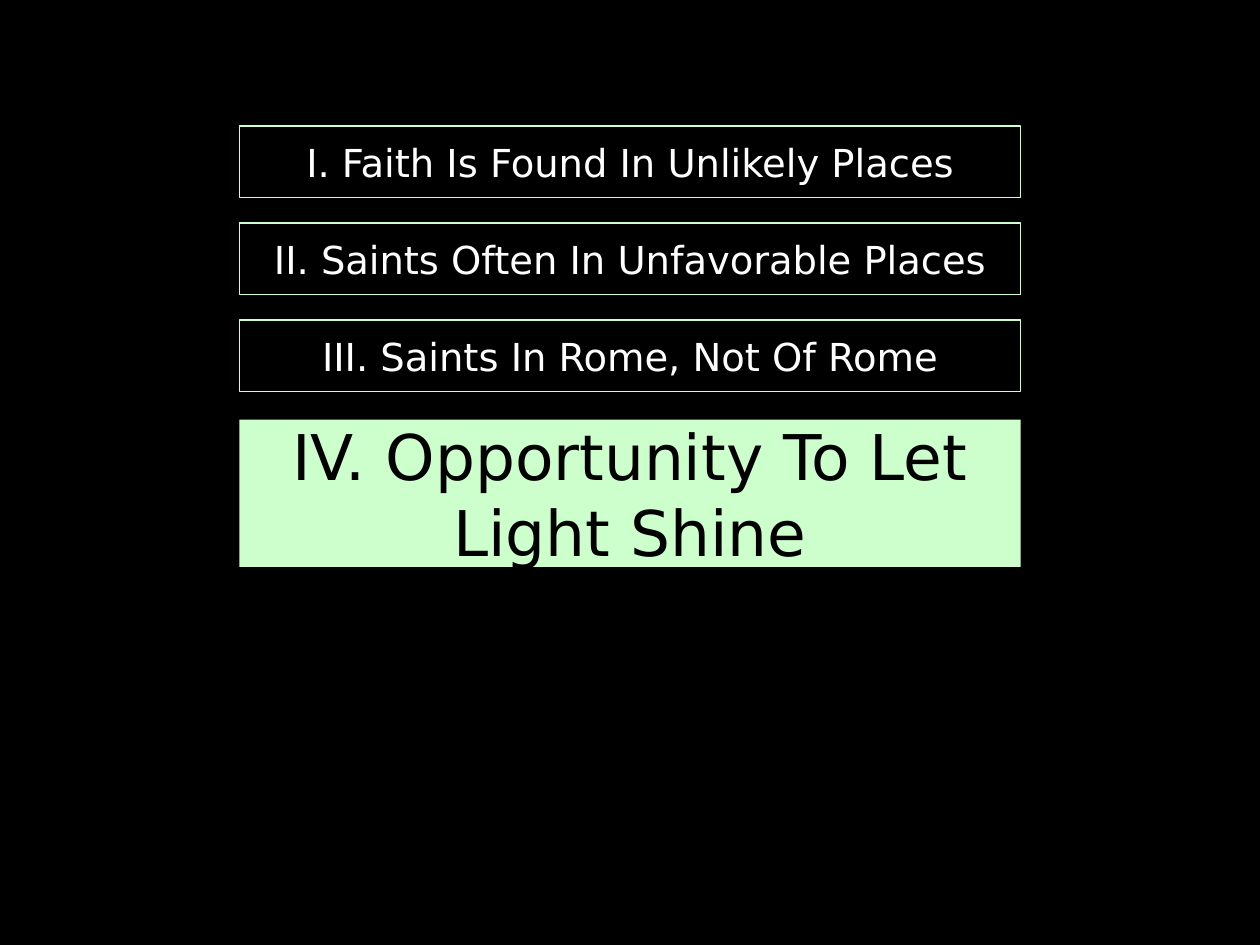
import pptx
import pptx.dml.color
import pptx.enum.shapes
import pptx.enum.text
import pptx.util

BLACK = pptx.dml.color.RGBColor(0x00, 0x00, 0x00)
WHITE = pptx.dml.color.RGBColor(0xFF, 0xFF, 0xFF)
MINT = pptx.dml.color.RGBColor(0xCC, 0xFF, 0xCC)
FONT = "DejaVu Sans"

# Column of boxes, in inches
WIDTH, HEIGHT = 10, 7.5
BOX_WIDTH = 0.62 * WIDTH
LEFT = (WIDTH - BOX_WIDTH) / 2
TOP, ROW_PITCH, ROW_HEIGHT = 1, 0.77, 0.57
FOCUS_TOP, FOCUS_HEIGHT = 3.33, 1.17

TITLE = "I. Faith Is Found In Unlikely Places"
OTHER_POINTS = [
    "II. Saints Often In Unfavorable Places",
    "III. Saints In Rome, Not Of Rome",
]
FOCUS_POINT = "IV. Opportunity To Let Light Shine"


def write_text(box, text, size=22, color=WHITE):
    frame = box.text_frame
    frame.word_wrap = True
    frame.auto_size = pptx.enum.text.MSO_AUTO_SIZE.NONE
    frame.vertical_anchor = pptx.enum.text.MSO_ANCHOR.MIDDLE
    para = frame.paragraphs[0]
    para.alignment = pptx.enum.text.PP_ALIGN.CENTER
    span = para.add_run()
    span.text = text
    span.font.name = FONT
    span.font.size = pptx.util.Pt(size)
    span.font.color.rgb = color


def place(box, top, height):
    box.left, box.top, box.width, box.height = (
        pptx.util.Inches(length) for length in (LEFT, top, BOX_WIDTH, height))


def paint(box, fill, line=None):
    box.fill.solid()
    box.fill.fore_color.rgb = fill
    if line is None:
        box.line.fill.background()
    else:
        box.line.color.rgb = line
        box.line.width = pptx.util.Pt(0.75)


def add_box(page):
    box = page.shapes.add_shape(
        pptx.enum.shapes.MSO_SHAPE.RECTANGLE, 0, 0, 0, 0)
    box.shadow.inherit = False
    return box


def outline_point(box, text, row):
    place(box, TOP + row * ROW_PITCH, ROW_HEIGHT)
    paint(box, BLACK, line=MINT)
    write_text(box, text)


def main():
    deck = pptx.Presentation()
    deck.slide_width = pptx.util.Inches(WIDTH)
    deck.slide_height = pptx.util.Inches(HEIGHT)
    page = deck.slides.add_slide(deck.slide_layouts.get_by_name("Title Only"))
    page.background.fill.solid()
    page.background.fill.fore_color.rgb = BLACK

    # First point is the title
    outline_point(page.shapes.title, TITLE, 0)

    # Highlighted point
    focus = add_box(page)
    place(focus, FOCUS_TOP, FOCUS_HEIGHT)
    paint(focus, MINT)
    write_text(focus, FOCUS_POINT, size=36, color=BLACK)

    # Remaining outlined points
    for row, text in enumerate(OTHER_POINTS, start=1):
        outline_point(add_box(page), text, row)

    deck.save("out.pptx")


if __name__ == "__main__":
    main()
